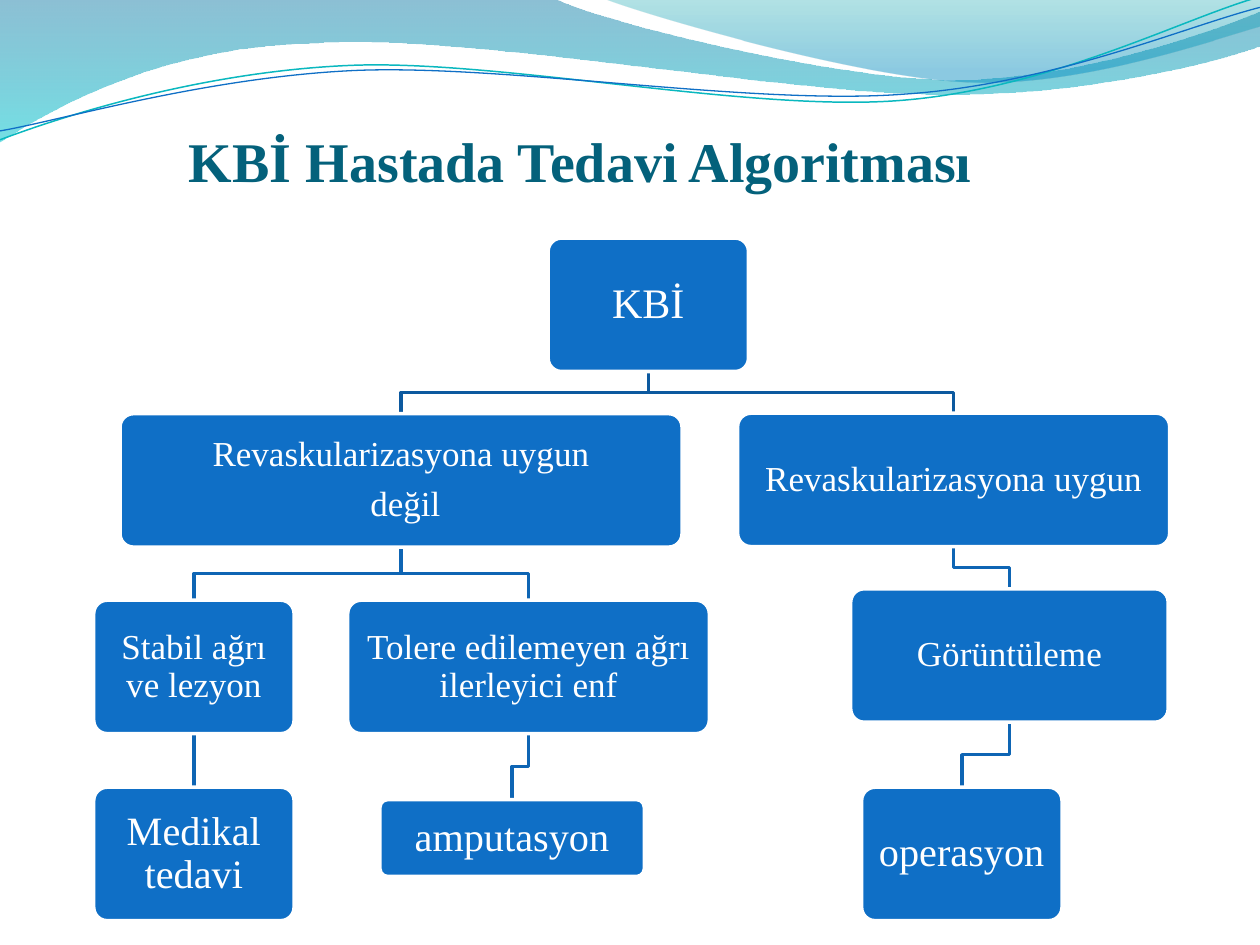
from dataclasses import dataclass

from lxml.etree import SubElement
from pptx import Presentation
from pptx.dml.color import RGBColor
from pptx.enum.shapes import MSO_SHAPE
from pptx.enum.text import MSO_ANCHOR, PP_ALIGN
from pptx.oxml.ns import qn
from pptx.util import Cm, Pt


@dataclass(frozen=True)
class Theme:
    font: str = "Times New Roman"
    title: str = "04617B"
    node: str = "0F6FC6"
    light: str = "FFFFFF"
    root_link: str = "0C599F"
    link: str = "0E65B4"
    left_wave: tuple = ((0, "0074A1", 45), (100, "00C6CF", 55))
    right_wave: tuple = ((0, "00A1A9", 30), (80, "008BBF", 45))
    teal_line: str = "0AB8BF"
    title_size: int = 32
    root_size: int = 24
    outcome_size: int = 23
    body_size: int = 20
    line_width: int = 2


@dataclass(frozen=True)
class Box:
    left: float
    top: float
    width: float
    height: float

    def within(self, outer):
        return Box(outer.left + self.left, outer.top + self.top, self.width, self.height)

    @property
    def center(self):
        return self.left + self.width / 2

    @property
    def right(self):
        return self.left + self.width

    @property
    def bottom(self):
        return self.top + self.height

    def lengths(self):
        return Cm(self.left), Cm(self.top), Cm(self.width), Cm(self.height)


THEME = Theme()

LEFT_WAVE = (Box(-0.03, -0.03, 25.46, 2.9), [
    (0, 0), (11.18, -0.03), (12.09, 0.43, 16.87, 1.6, 19.25, 1.6),
    (21.67, 1.6, 24.33, 0.66, 25.4, 0.23), (25.43, 0.91),
    (24.97, 1.12, 22.1, 1.93, 18.95, 1.9), (15.8, 1.9, 9.7, 0.71, 6.53, 0.86),
    (3.28, 0.91, 1.17, 2.11, -0.03, 2.87), (0, 0)])
RIGHT_WAVE = (Box(12.17, -0.03, 13.23, 1.78), [
    (12.17, -0.03), (12.93, 0.28, 17.32, 1.57, 19.53, 1.65),
    (21.74, 1.75, 24.41, 0.81, 25.4, 0.53), (25.4, 0), (12.17, -0.03)])
TEAL_CURVE = (Box(0, -0.05, 25.35, 2.87), [
    (0, 2.82), (1.22, 2.36, 4.01, 1.45, 7.04, 1.32),
    (10.03, 1.19, 15.06, 2.26, 18.11, 2.03), (21.16, 1.8, 23.83, 0.38, 25.35, -0.05)])
BLUE_CURVE = (Box(0, 0.15, 25.4, 2.49), [
    (0, 2.64), (1.19, 2.44, 4.17, 1.55, 7.19, 1.42),
    (10.24, 1.3, 15.16, 2.13, 18.21, 1.9), (21.23, 1.7, 23.9, 0.53, 25.4, 0.15)])

ROW_HEIGHT, NARROW = 2.69, 4.04
NODES = {
    "root": (Box(9.16, 0, NARROW, ROW_HEIGHT), ["KBİ"], THEME.root_size),
    "unsuitable": (Box(0.53, 3.54, 11.33, ROW_HEIGHT),
                   ["Revaskularizasyona uygun", " değil"], THEME.body_size),
    "suitable": (Box(12.98, 3.53, 8.71, ROW_HEIGHT), ["Revaskularizasyona uygun"],
                 THEME.body_size),
    "stable": (Box(0, 7.3, NARROW, ROW_HEIGHT), ["Stabil ağrı ve lezyon"], THEME.body_size),
    "severe": (Box(5.12, 7.3, 7.29, ROW_HEIGHT),
               ["Tolere edilemeyen ağrı ilerleyici enf"], THEME.body_size),
    "imaging": (Box(15.26, 7.07, 6.4, ROW_HEIGHT), ["Görüntüleme"], THEME.body_size),
    "medical": (Box(0, 11.07, NARROW, ROW_HEIGHT), ["Medikal tedavi"], THEME.outcome_size),
    "amputation": (Box(5.77, 11.32, 5.33, 1.55), ["amputasyon"], THEME.outcome_size),
    "operation": (Box(15.48, 11.07, NARROW, ROW_HEIGHT), ["operasyon"], THEME.outcome_size),
}
LINKS = [("root", "unsuitable"), ("root", "suitable"), ("unsuitable", "stable"),
         ("unsuitable", "severe"), ("suitable", "imaging"), ("stable", "medical"),
         ("severe", "amputation"), ("imaging", "operation")]
MIN_LINK_WIDTH = 0.25


def rgb(value):
    return RGBColor.from_string(value)


def add_outline(slide, bounds, segments, closed=False):
    builder = slide.shapes.build_freeform(Cm(bounds.left), Cm(bounds.top))
    builder.add_line_segments([(Cm(bounds.right), Cm(bounds.bottom))], close=False)
    outline = builder.convert_to_shape()
    outline.shadow.inherit = False
    geometry = next(outline.element.iter(qn("a:path")))
    for command in list(geometry):
        geometry.remove(command)
    for index, segment in enumerate(segments):
        curve = "a:cubicBezTo" if len(segment) == 6 else "a:lnTo"
        command = SubElement(geometry, qn(curve if index else "a:moveTo"))
        for x, y in zip(segment[::2], segment[1::2]):
            point = SubElement(command, qn("a:pt"))
            point.set("x", str(Cm(x - bounds.left)))
            point.set("y", str(Cm(y - bounds.top)))
    if closed:
        SubElement(geometry, qn("a:close"))
    return outline


def add_wave(slide, box, bounds, segments, stops):
    wave = add_outline(slide, bounds, segments, closed=True)
    wave.left += Cm(box.left)
    wave.top += Cm(box.top)
    wave.line.fill.background()
    wave.fill.gradient()
    wave.fill.gradient_angle = 270
    for stop, (position, color, _) in zip(wave.fill.gradient_stops, stops):
        stop.position = position / 100
        stop.color.rgb = rgb(color)
    for element, (_, _, opacity) in zip(wave.element.iter(qn("a:srgbClr")), stops):
        SubElement(element, qn("a:alpha")).set("val", str(opacity * 1000))


def add_stroke(slide, box, bounds, segments, color, width):
    stroke = add_outline(slide, bounds, segments)
    stroke.left += Cm(box.left)
    stroke.top += Cm(box.top)
    stroke.fill.background()
    stroke.line.color.rgb = rgb(color)
    stroke.line.width = Pt(width)


def draw_header(slide, box):
    add_wave(slide, box, *LEFT_WAVE, THEME.left_wave)
    add_wave(slide, box, *RIGHT_WAVE, THEME.right_wave)
    add_stroke(slide, box, *TEAL_CURVE, THEME.teal_line, 0.85)
    add_stroke(slide, box, *BLUE_CURVE, THEME.node, 0.75)


def style_paragraph(paragraph, size, color, bold=False):
    paragraph.font.name = THEME.font
    paragraph.font.size = Pt(size)
    paragraph.font.bold = bold
    paragraph.font.color.rgb = rgb(color)


def draw_title(slide, box):
    frame = slide.shapes.add_textbox(*box.lengths()).text_frame
    frame.word_wrap = True
    frame.vertical_anchor = MSO_ANCHOR.BOTTOM
    frame.margin_left = Cm(3.1)
    frame.margin_right = frame.margin_bottom = 0
    frame.text = "KBİ Hastada Tedavi Algoritması"
    style_paragraph(frame.paragraphs[0], THEME.title_size, THEME.title, True)


def add_node(slide, box, lines, size):
    node = slide.shapes.add_shape(MSO_SHAPE.ROUNDED_RECTANGLE, *box.lengths())
    node.adjustments[0] = 0.1
    node.shadow.inherit = False
    node.fill.solid()
    node.fill.fore_color.rgb = rgb(THEME.node)
    node.line.color.rgb = rgb(THEME.light)
    node.line.width = Pt(THEME.line_width)
    frame = node.text_frame
    frame.word_wrap = True
    frame.vertical_anchor = MSO_ANCHOR.MIDDLE
    inset = Cm(0.2 if size == THEME.body_size else 0.24)
    frame.margin_left = frame.margin_right = frame.margin_top = frame.margin_bottom = inset
    frame.text = "\n".join(lines)
    for paragraph in frame.paragraphs:
        paragraph.alignment = PP_ALIGN.CENTER
        paragraph.line_spacing = 0.9
        style_paragraph(paragraph, size, THEME.light)
    for paragraph in frame.paragraphs[:-1]:
        paragraph.space_after = Pt(7)


def add_link(slide, box, parent, child, color):
    width = max(abs(parent.center - child.center), MIN_LINK_WIDTH)
    left = (parent.center + child.center - width) / 2
    bounds = Box(left, parent.bottom, width, child.top - parent.bottom)
    segments = [(parent.center, parent.bottom), (child.center, child.top)]
    if parent.center != child.center:
        middle = (parent.bottom + child.top) / 2
        segments[1:1] = [(parent.center, middle), (child.center, middle)]
    add_stroke(slide, box, bounds, segments, color, THEME.line_width)


def draw_treatment_tree(slide, box):
    for parent, child in LINKS:
        color = THEME.root_link if parent == "root" else THEME.link
        add_link(slide, box, NODES[parent][0], NODES[child][0], color)
    for place, lines, size in NODES.values():
        add_node(slide, place.within(box), lines, size)


def main():
    deck = Presentation()
    deck.slide_width, deck.slide_height = Cm(25.4), Cm(19.05)
    slide = deck.slides.add_slide(deck.slide_layouts[6])
    draw_header(slide, Box(0, 0, 25.4, 2.87))
    draw_title(slide, Box(0.71, 0.72, 22.86, 3.18))
    draw_treatment_tree(slide, Box(1.89, 4.8, 21.71, 13.76))
    deck.save("out.pptx")


if __name__ == "__main__":
    main()
